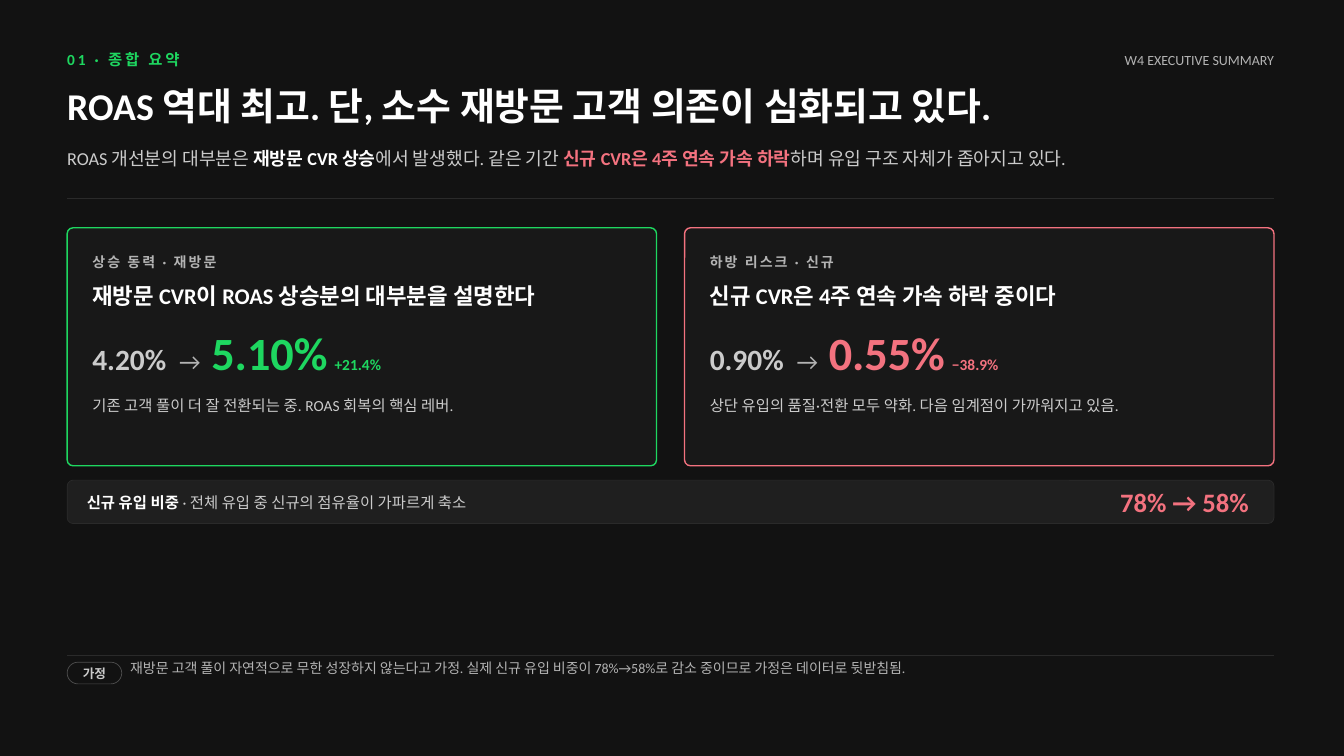
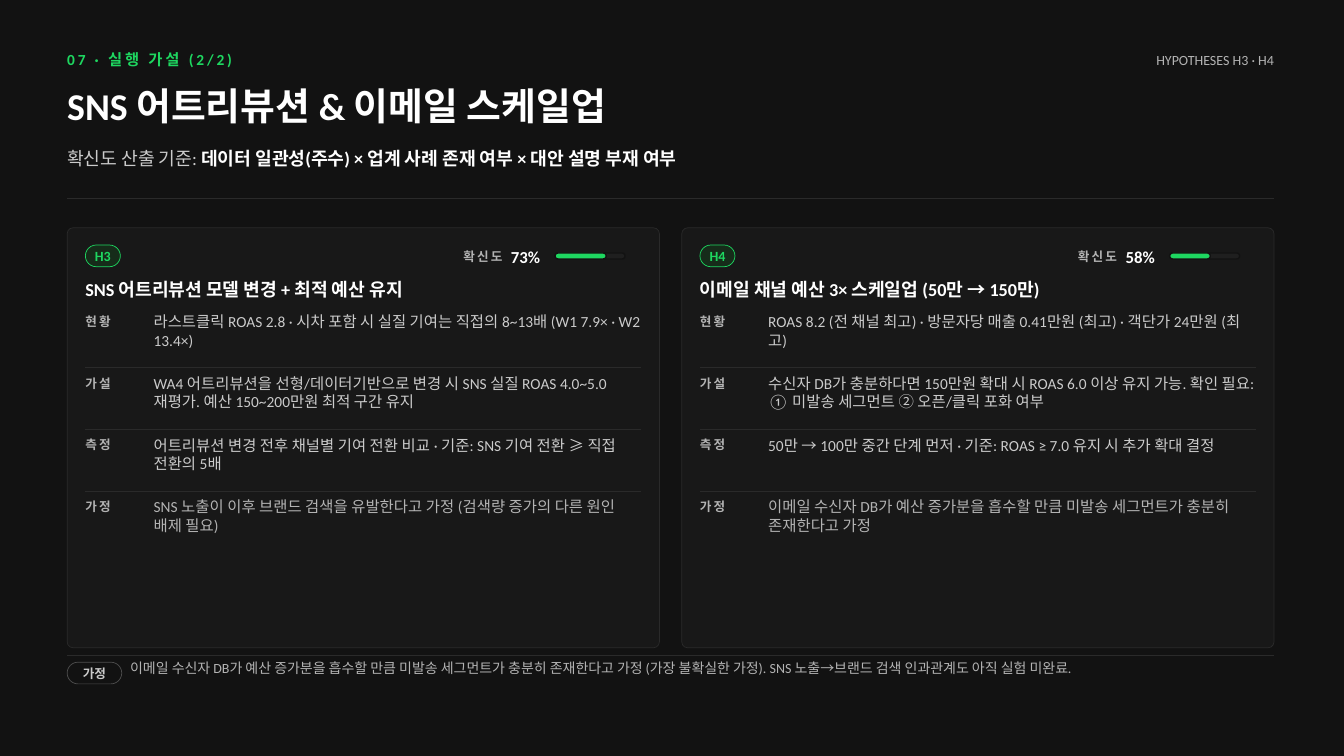
from dataclasses import dataclass

from lxml import etree
from pptx import Presentation
from pptx.dml import color as dml
from pptx.enum import shapes, text
from pptx.oxml import ns
from pptx.util import Pt


@dataclass(frozen=True)
class Theme:
    font: str = "Calibri"
    page: str = "121212"
    card: str = "181818"
    raised: str = "1F1F1F"
    rule: str = "2A2A2A"
    outline: str = "4D4D4D"
    tint: str = "162C1A"
    strong: str = "FFFFFF"
    body: str = "CBCBCB"
    muted: str = "B3B3B3"
    good: str = "1ED760"
    bad: str = "F3727F"
    title_size: float = 27
    figure_size: float = 33
    before_size: float = 21
    share_size: float = 19
    arrow_size: float = 17
    headline_size: float = 16
    lead_size: float = 13
    percent_size: float = 12
    body_size: float = 11
    small_size: float = 10
    label_size: float = 9


T = Theme()
LEFT, WIDTH = 48, 862
CARDS_TOP = 162.7
RADIUS = 4.25
MIDDLE, TOP = text.MSO_ANCHOR.MIDDLE, text.MSO_ANCHOR.TOP
START, CENTER, END = text.PP_ALIGN.LEFT, text.PP_ALIGN.CENTER, text.PP_ALIGN.RIGHT


def rgb(value):
    return dml.RGBColor.from_string(value)


def write(frame, content, size, color, bold=False, align=START, anchor=MIDDLE,
          tracking=0, tabs=()):
    """Fill a frame with a string, or with (text, color, bold[, size]) runs."""
    frame.word_wrap = True
    frame.auto_size = text.MSO_AUTO_SIZE.NONE
    frame.margin_left = frame.margin_right = frame.margin_top = frame.margin_bottom = 0
    frame.vertical_anchor = anchor
    paragraph = frame.paragraphs[0]
    paragraph.alignment = align
    properties = paragraph._p.get_or_add_pPr()
    if tabs:
        stops = etree.SubElement(properties, ns.qn("a:tabLst"))
        for position in tabs:
            etree.SubElement(stops, ns.qn("a:tab"), pos=str(Pt(position)), algn="l")
    font = paragraph.font
    font.name, font.size, font.bold = T.font, Pt(size), bold
    font.color.rgb = rgb(color)
    if tracking:
        properties.find(ns.qn("a:defRPr")).set("spc", str(int(tracking * 100)))
    if isinstance(content, str):
        paragraph.add_run().text = content
        return
    for words, run_color, run_bold, *run_size in content:
        run = paragraph.add_run()
        run.text = words
        run.font.color.rgb = rgb(run_color)
        run.font.bold = run_bold
        if run_size:
            run.font.size = Pt(run_size[0])


def label(slide, x, y, w, h, content, size, color, **style):
    box = slide.shapes.add_textbox(Pt(x), Pt(y), Pt(w), Pt(h))
    write(box.text_frame, content, size, color, **style)


def panel(slide, x, y, w, h, fill, line, line_width=0.5, radius=RADIUS):
    shape = slide.shapes.add_shape(
        shapes.MSO_SHAPE.ROUNDED_RECTANGLE, Pt(x), Pt(y), Pt(w), Pt(h))
    shape.adjustments[0] = min(0.5, radius / min(w, h))
    shape.shadow.inherit = False
    shape.fill.solid()
    shape.fill.fore_color.rgb = rgb(fill)
    shape.line.color.rgb = rgb(line)
    shape.line.width = Pt(line_width)
    return shape


def pill(slide, x, y, w, words, size, color, fill, line):
    badge = panel(slide, x, y, w, 15.5, fill, line, radius=15.5)
    write(badge.text_frame, words, size, color, bold=True, align=CENTER)


def rule(slide, x, y, w, weight=0.75):
    line = slide.shapes.add_connector(
        shapes.MSO_CONNECTOR.STRAIGHT, Pt(x), Pt(y), Pt(x + w), Pt(y))
    line.line.color.rgb = rgb(T.rule)
    line.line.width = Pt(weight)
    etree.SubElement(line._element.spPr, ns.qn("a:effectLst"))


def header(slide, kicker, tag, title, subtitle):
    label(slide, LEFT, 36, 560, 13.5, kicker, T.body_size, T.good, bold=True, tracking=2)
    label(slide, LEFT + 560, 36, WIDTH - 560, 13.5, tag, T.small_size, T.muted, align=END)
    label(slide, LEFT, 59, WIDTH, 40, title, T.title_size, T.strong, bold=True, anchor=TOP)
    label(slide, LEFT, 105, WIDTH, 30, subtitle, T.lead_size, T.body, anchor=TOP)
    rule(slide, LEFT, 142, WIDTH)


def footer(slide, assumption):
    rule(slide, LEFT, 468, WIDTH)
    pill(slide, LEFT, 473, 39, "가정", T.label_size, T.body, T.page, T.outline)
    label(slide, LEFT + 45, 471, WIDTH - 45, 31, assumption, T.small_size, T.muted,
          anchor=TOP)


def base_slide(deck, kicker, tag, title, subtitle, assumption):
    slide = deck.slides.add_slide(deck.slide_layouts[6])
    slide.background.fill.solid()
    slide.background.fill.fore_color.rgb = rgb(T.page)
    header(slide, kicker, tag, title, subtitle)
    footer(slide, assumption)
    return slide


def card_columns(cards, gap):
    """Yield (x, width, card) for cards of equal width across the page."""
    w = (WIDTH - gap * (len(cards) - 1)) / len(cards)
    for index, card in enumerate(cards):
        yield LEFT + index * (w + gap), w, card


def driver_card(slide, x, y, w, h, accent, kicker, headline, before, after, change, note):
    panel(slide, x, y, w, h, T.card, accent, line_width=1)
    x, w = x + 18, w - 36
    label(slide, x, y + 18, w, 12, kicker, T.small_size, T.muted, bold=True, tracking=1.5)
    label(slide, x, y + 34.5, w, 28.5, headline, T.headline_size, T.strong, bold=True)
    figures = [
        (before, T.body, True, T.before_size),
        ("\t→", T.muted, False, T.arrow_size),
        ("\t" + after, accent, True, T.figure_size),
        ("\t" + change, accent, True, T.body_size),
    ]
    label(slide, x, y + 69, w, 40, figures, T.before_size, T.body, tabs=(62, 85, 173))
    label(slide, x, y + 114.5, w, 24, note, T.body_size, T.body)


def share_bar(slide, x, y, w, h):
    panel(slide, x, y, w, h, T.raised, T.rule)
    caption = [("신규 유입 비중", T.strong, True),
               (" · 전체 유입 중 신규의 점유율이 가파르게 축소", T.body, False)]
    label(slide, x + 14, y, 560, h, caption, T.body_size, T.body)
    label(slide, x + w - 278, y, 260, h, "78% → 58%", T.share_size, T.bad,
          bold=True, align=END)


def confidence_meter(slide, x, y, percent):
    track = 50
    label(slide, x, y, 30, 11, "확신도", T.label_size, T.muted, bold=True, tracking=1.5)
    label(slide, x + 34, y, 29, 11, f"{percent}%", T.percent_size, T.strong, bold=True)
    for w, fill in ((track, T.raised), (track * percent / 100, T.good)):
        panel(slide, x + 65.5, y + 2.8, w, 4.3, fill, T.page, line_width=1)


def hypothesis_card(slide, x, y, w, h, code, percent, headline, details):
    panel(slide, x, y, w, h, T.card, T.rule)
    confidence_x = x + w - 140
    x, w = x + 13, w - 26
    pill(slide, x, y + 12.3, 25, code, T.small_size, T.good, T.tint, T.good)
    confidence_meter(slide, confidence_x, y + 15.2, percent)
    label(slide, x, y + 31, w, 26, headline, T.lead_size, T.strong, bold=True)
    names = ("현황", "가설", "측정", "가정")
    for index, (name, detail) in enumerate(zip(names, details)):
        row_y = y + 60.5 + index * 44
        last = index == len(names) - 1
        label(slide, x, row_y, 45, 13, name, T.label_size, T.muted, bold=True, tracking=1.5)
        label(slide, x + 48.7, row_y, w - 48.7, 35, detail, T.body_size,
              T.muted if last else T.body, anchor=TOP)
        if not last:
            rule(slide, x, row_y + 39.5, w, weight=0.5)


def summary_slide(deck):
    slide = base_slide(
        deck, "01 · 종합 요약", "W4 EXECUTIVE SUMMARY",
        "ROAS 역대 최고. 단, 소수 재방문 고객 의존이 심화되고 있다.",
        [("ROAS 개선분의 대부분은 ", T.body, False),
         ("재방문 CVR 상승", T.strong, True),
         ("에서 발생했다. 같은 기간 ", T.body, False),
         ("신규 CVR은 4주 연속 가속 하락", T.bad, True),
         ("하며 유입 구조 자체가 좁아지고 있다.", T.body, False)],
        "재방문 고객 풀이 자연적으로 무한 성장하지 않는다고 가정. "
        "실제 신규 유입 비중이 78%→58%로 감소 중이므로 가정은 데이터로 뒷받침됨.")
    drivers = [
        (T.good, "상승 동력 · 재방문", "재방문 CVR이 ROAS 상승분의 대부분을 설명한다",
         "4.20%", "5.10%", "+21.4%",
         "기존 고객 풀이 더 잘 전환되는 중. ROAS 회복의 핵심 레버."),
        (T.bad, "하방 리스크 · 신규", "신규 CVR은 4주 연속 가속 하락 중이다",
         "0.90%", "0.55%", "−38.9%",
         "상단 유입의 품질·전환 모두 약화. 다음 임계점이 가까워지고 있음."),
    ]
    for x, w, driver in card_columns(drivers, gap=20):
        driver_card(slide, x, CARDS_TOP, w, 170, *driver)
    share_bar(slide, LEFT, CARDS_TOP + 180.3, WIDTH, 31)


def hypotheses_slide(deck):
    slide = base_slide(
        deck, "07 · 실행 가설 (2/2)", "HYPOTHESES H3 · H4",
        "SNS 어트리뷰션 & 이메일 스케일업",
        [("확신도 산출 기준: ", T.body, False),
         ("데이터 일관성(주수) × 업계 사례 존재 여부 × 대안 설명 부재 여부", T.strong, True)],
        "이메일 수신자 DB가 예산 증가분을 흡수할 만큼 미발송 세그먼트가 충분히 존재한다고 가정 "
        "(가장 불확실한 가정). SNS 노출→브랜드 검색 인과관계도 아직 실험 미완료.")
    hypotheses = [
        ("H3", 73, "SNS 어트리뷰션 모델 변경 + 최적 예산 유지", (
            "라스트클릭 ROAS 2.8 · 시차 포함 시 실질 기여는 직접의 8~13배 (W1 7.9× · W2 13.4×)",
            "WA4 어트리뷰션을 선형/데이터기반으로 변경 시 SNS 실질 ROAS 4.0~5.0 재평가. "
            "예산 150~200만원 최적 구간 유지",
            "어트리뷰션 변경 전후 채널별 기여 전환 비교 · 기준: SNS 기여 전환 ≥ 직접 전환의 5배",
            "SNS 노출이 이후 브랜드 검색을 유발한다고 가정 (검색량 증가의 다른 원인 배제 필요)")),
        ("H4", 58, "이메일 채널 예산 3× 스케일업 (50만 → 150만)", (
            "ROAS 8.2 (전 채널 최고) · 방문자당 매출 0.41만원 (최고) · 객단가 24만원 (최고)",
            "수신자 DB가 충분하다면 150만원 확대 시 ROAS 6.0 이상 유지 가능. "
            "확인 필요: ① 미발송 세그먼트 ② 오픈/클릭 포화 여부",
            "50만 → 100만 중간 단계 먼저 · 기준: ROAS ≥ 7.0 유지 시 추가 확대 결정",
            "이메일 수신자 DB가 예산 증가분을 흡수할 만큼 미발송 세그먼트가 충분히 존재한다고 가정")),
    ]
    for x, w, hypothesis in card_columns(hypotheses, gap=16):
        hypothesis_card(slide, x, CARDS_TOP, w, 300, *hypothesis)


def main():
    deck = Presentation()
    deck.slide_width, deck.slide_height = Pt(960), Pt(540)
    summary_slide(deck)
    hypotheses_slide(deck)
    deck.save("out.pptx")


if __name__ == "__main__":
    main()
